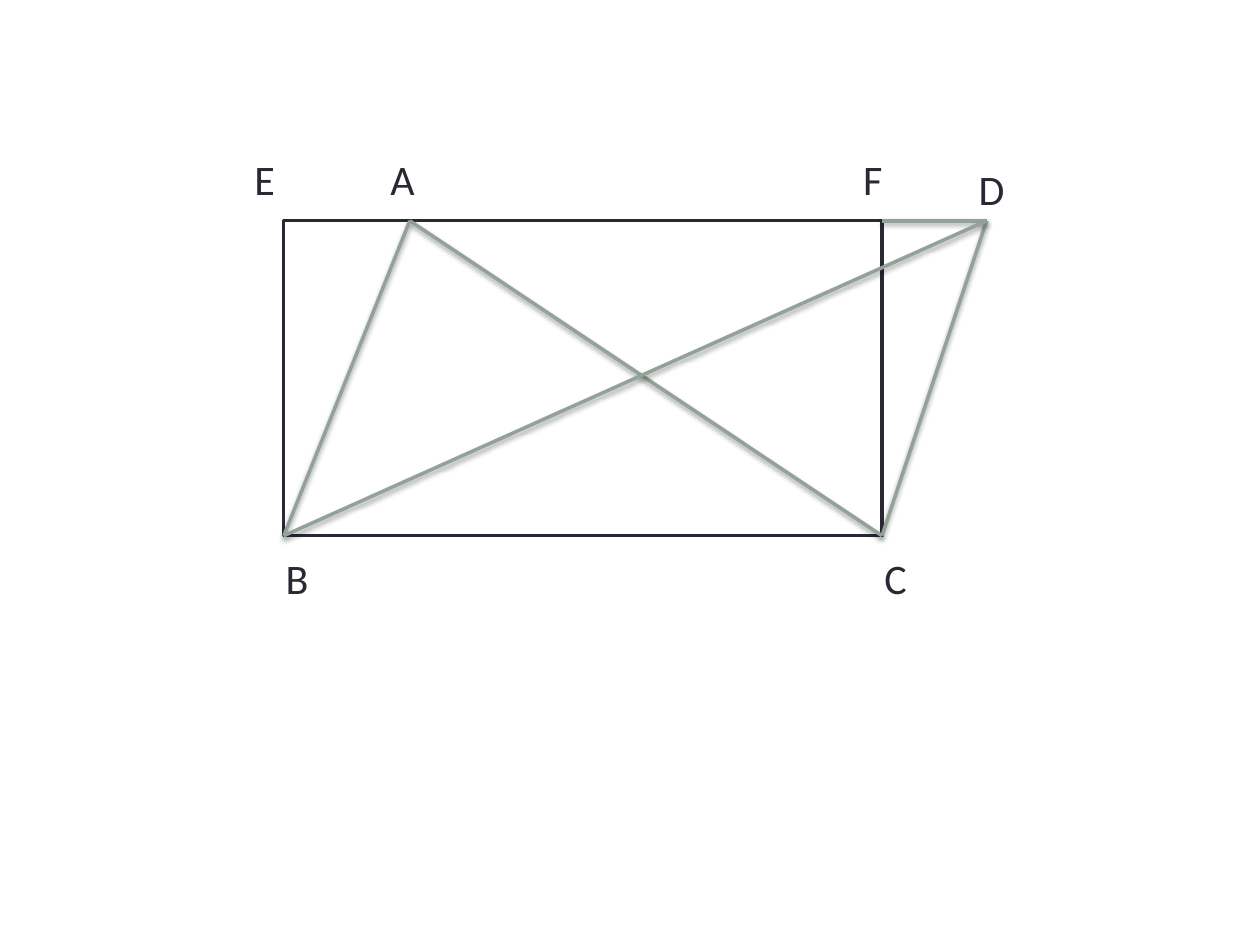
import lxml.etree
import pptx
import pptx.dml.color
import pptx.enum.shapes
import pptx.enum.text
import pptx.oxml.ns
import pptx.util

Cm = pptx.util.Cm
Pt = pptx.util.Pt


def color(value):
    return pptx.dml.color.RGBColor.from_string(value)


class GeometryFigure:
    """Style and current slide, with one method per kind of element."""

    INK = "292934"
    ACCENT = "93A299"
    PAPER = "FFFFFF"
    FONT = "Calibri"
    TEXT_SIZE = Pt(24)
    LINE_WIDTH = Pt(2)
    LABEL_SIZE = Cm(1.27)

    def __init__(self, presentation):
        self.slide = presentation.slides.add_slide(presentation.slide_layouts[6])
        self.shapes = self.slide.shapes.add_group_shape().shapes

    def rectangle(self, top_left, bottom_right):
        left, top = top_left
        right, bottom = bottom_right
        shape = self.shapes.add_shape(
            pptx.enum.shapes.MSO_SHAPE.FLOWCHART_PROCESS,
            Cm(left), Cm(top), Cm(right - left), Cm(bottom - top))
        shape.shadow.inherit = False
        shape.fill.solid()
        shape.fill.fore_color.rgb = color(self.PAPER)
        shape.line.color.rgb = color(self.INK)
        shape.line.width = self.LINE_WIDTH

    def segment(self, start, end):
        connector = self.shapes.add_connector(
            pptx.enum.shapes.MSO_CONNECTOR.STRAIGHT, *map(Cm, start + end))
        connector.line.color.rgb = color(self.ACCENT)
        connector.line.width = self.LINE_WIDTH
        self.add_shadow(connector)

    def add_shadow(self, connector):
        qn = pptx.oxml.ns.qn
        properties = connector.element.find(qn("p:spPr"))
        effects = lxml.etree.SubElement(properties, qn("a:effectLst"))
        shadow = lxml.etree.SubElement(
            effects, qn("a:outerShdw"), blurRad=str(Pt(3.1)),
            dist=str(Pt(1.6)), dir="5400000", rotWithShape="0")
        shade = lxml.etree.SubElement(shadow, qn("a:srgbClr"), val="000000")
        lxml.etree.SubElement(shade, qn("a:alpha"), val="38000")

    def label(self, text, left, top):
        shape = self.shapes.add_textbox(
            Cm(left), Cm(top), self.LABEL_SIZE, self.LABEL_SIZE)
        text_frame = shape.text_frame
        text_frame.text = text
        text_frame.word_wrap = True
        text_frame.auto_size = pptx.enum.text.MSO_AUTO_SIZE.SHAPE_TO_FIT_TEXT
        font = text_frame.paragraphs[0].runs[0].font
        font.name = self.FONT
        font.size = self.TEXT_SIZE
        font.color.rgb = color(self.INK)


def main():
    presentation = pptx.Presentation()
    presentation.slide_width = Cm(25.4)
    presentation.slide_height = Cm(19.05)
    figure = GeometryFigure(presentation)

    # Corner points of the rectangle EBCF and the parallelogram's A and D
    top, bottom = 4.45, 10.8
    points = {
        "E": (5.72, top), "A": (8.26, top), "F": (17.78, top),
        "D": (19.89, top), "B": (5.72, bottom), "C": (17.78, bottom),
    }

    # Rectangle and the segments between named points
    figure.rectangle(points["E"], points["C"])
    for start, end in ("FD", "DC", "AC", "AB", "BD"):
        figure.segment(points[start], points[end])

    # Point labels
    above, below = 2.97, 11.02
    for text, left, label_top in (
            ("A", 7.62, above), ("F", 17.15, above), ("E", 4.88, above),
            ("B", 5.51, below), ("C", 17.58, below), ("D", 19.48, 3.18)):
        figure.label(text, left, label_top)

    presentation.save("out.pptx")


if __name__ == "__main__":
    main()
